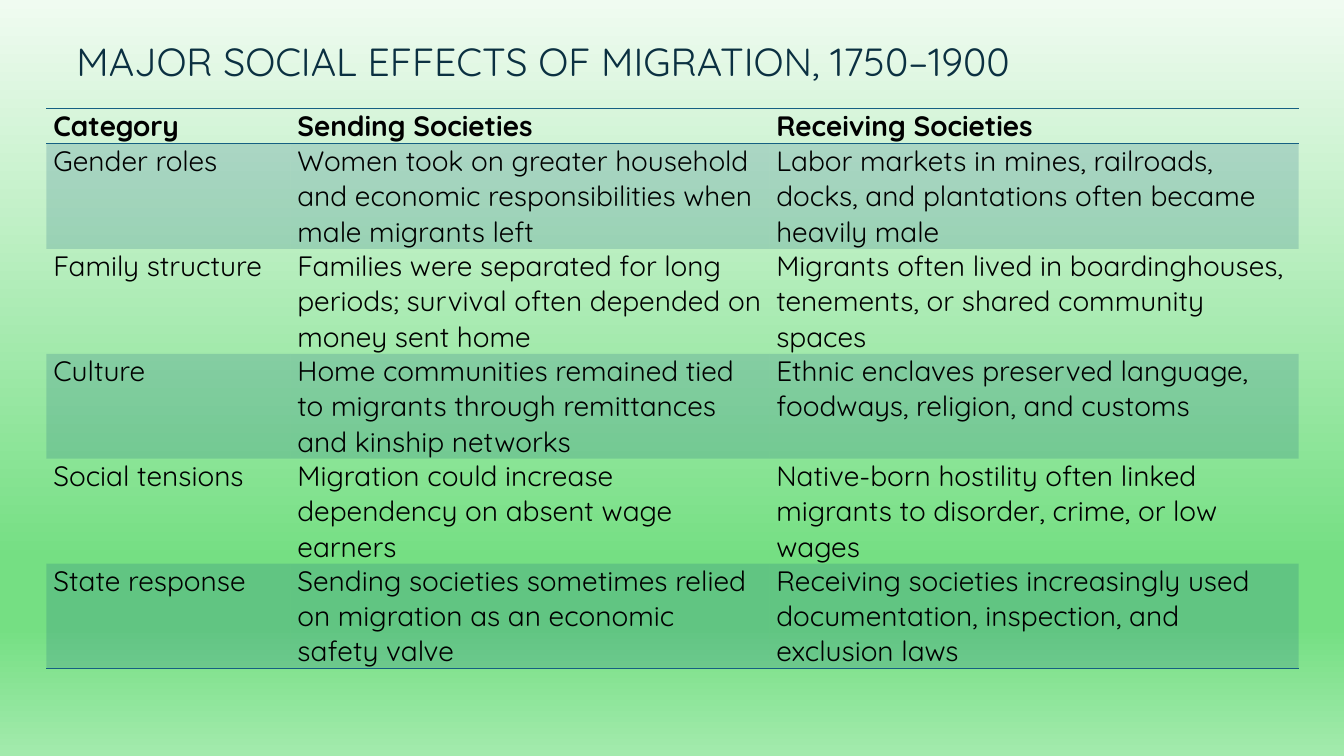
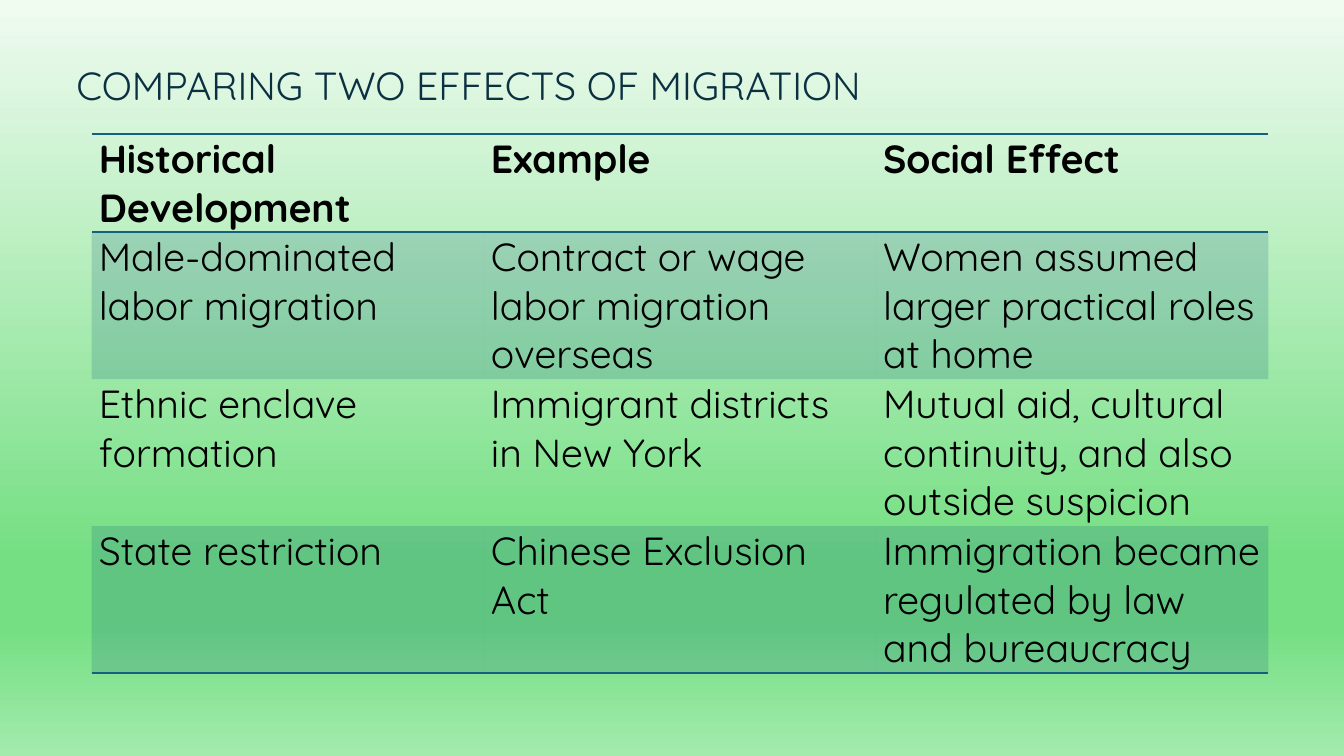
from lxml import etree
from pptx import Presentation
from pptx.dml.color import RGBColor
from pptx.enum.text import MSO_ANCHOR
from pptx.oxml.ns import qn
from pptx.util import Inches, Pt

BOTTOM = MSO_ANCHOR.BOTTOM
FONT = "Quicksand"
COLORS = {"title": "0B3041", "text": "000000", "accent": "156082"}
BACKGROUND_STOPS = [(0, "F0FBF1"), (74, "75DF83"), (83, "75DF83"), (100, "A3EAAD")]
BAND_OPACITY = 20
TITLE_SIZE = 28
LINE_HEIGHT = 1.25
PLAIN_TABLE_STYLE = "{2D5ABB26-0587-4C30-8999-92F81FD0307C}"

SLIDES = [
    {
        "title": "MAJOR SOCIAL EFFECTS OF MIGRATION, 1750–1900",
        "title_top": 0.01,
        "table_at": (0.46, 1.08),
        "columns": [2.42, 4.75, 5.25],
        "size": 20,
        "header_lines": 1,
        "rows": [
            ("Category", "Sending Societies", "Receiving Societies"),
            ("Gender roles",
             "Women took on greater household and economic responsibilities when male migrants left",
             "Labor markets in mines, railroads, docks, and plantations often became heavily male"),
            ("Family structure",
             "Families were separated for long periods; survival often depended on money sent home",
             "Migrants often lived in boardinghouses, tenements, or shared community spaces"),
            ("Culture",
             "Home communities remained tied to migrants through remittances and kinship networks",
             "Ethnic enclaves preserved language, foodways, religion, and customs"),
            ("Social tensions",
             "Migration could increase dependency on absent wage earners",
             "Native-born hostility often linked migrants to disorder, crime, or low wages"),
            ("State response",
             "Sending societies sometimes relied on migration as an economic safety valve",
             "Receiving societies increasingly used documentation, inspection, and exclusion laws"),
        ],
    },
    {
        "title": "COMPARING TWO EFFECTS OF MIGRATION",
        "title_top": 0.25,
        "table_at": (0.91, 1.33),
        "columns": [3.89, 3.89, 3.89],
        "size": 28,
        "header_lines": 2,
        "rows": [
            ("Historical Development", "Example", "Social Effect"),
            ("Male-dominated labor migration",
             "Contract or wage labor migration overseas",
             "Women assumed larger practical roles at home"),
            ("Ethnic enclave formation",
             "Immigrant districts in New York",
             "Mutual aid, cultural continuity, and also outside suspicion"),
            ("State restriction",
             "Chinese Exclusion Act",
             "Immigration became regulated by law and bureaucracy"),
        ],
    },
]
BODY_LINES = 3


def rgb(name):
    return RGBColor.from_string(COLORS[name])


def paint_background(master):
    fill = master.background.fill
    fill.gradient()
    fill.gradient_angle = 270
    stops = master.element.find(".//" + qn("a:gsLst"))
    for old_stop in list(stops):
        stops.remove(old_stop)
    for position, color in BACKGROUND_STOPS:
        stop = etree.SubElement(stops, qn("a:gs"), pos=str(position * 1000))
        etree.SubElement(stop, qn("a:srgbClr"), val=color)


def add_text(paragraph, text, size, color, bold=False):
    run = paragraph.add_run()
    run.text = text
    run.font.name = FONT
    run.font.size = Pt(size)
    run.font.bold = bold
    run.font.color.rgb = rgb(color)


def add_title(slide, text, top):
    title = slide.shapes.add_textbox(Inches(0.66), Inches(top), Inches(11.67), Inches(0.88))
    frame = title.text_frame
    frame.word_wrap = True
    frame.vertical_anchor = BOTTOM
    frame.paragraphs[0].line_spacing = 0.9
    add_text(frame.paragraphs[0], text, TITLE_SIZE, "title")


def add_border(cell, side):
    properties = cell._tc.get_or_add_tcPr()
    line = etree.SubElement(properties, qn("a:" + side), w=str(Pt(1)))
    solid = etree.SubElement(line, qn("a:solidFill"))
    etree.SubElement(solid, qn("a:srgbClr"), val=COLORS["accent"])


def fill_band(cell):
    cell.fill.solid()
    cell.fill.fore_color.rgb = rgb("accent")
    color = cell._tc.tcPr.find(qn("a:solidFill")).find(qn("a:srgbClr"))
    etree.SubElement(color, qn("a:alpha"), val=str(BAND_OPACITY * 1000))


def style_cell(cell, row, last_row):
    cell.margin_left = cell.margin_right = Inches(0.07)
    cell.margin_top = cell.margin_bottom = 0
    if row == 0:
        add_border(cell, "lnT")
    if row in (0, last_row):
        add_border(cell, "lnB")
    if row % 2:
        fill_band(cell)
    else:
        cell.fill.background()


def add_comparison(slide, content):
    rows, columns, size = content["rows"], content["columns"], content["size"]
    line = size * LINE_HEIGHT
    heights = [Pt(line * content["header_lines"])] + [Pt(line * BODY_LINES)] * (len(rows) - 1)
    left, top = content["table_at"]
    frame = slide.shapes.add_table(len(rows), len(columns), Inches(left), Inches(top),
                                   Inches(sum(columns)), sum(heights))
    table = frame.table
    table._tbl.tblPr.find(qn("a:tableStyleId")).text = PLAIN_TABLE_STYLE
    for column, width in zip(table.columns, columns):
        column.width = Inches(width)
    for r, texts in enumerate(rows):
        table.rows[r].height = heights[r]
        for c, text in enumerate(texts):
            cell = table.cell(r, c)
            style_cell(cell, r, len(rows) - 1)
            add_text(cell.text_frame.paragraphs[0], text, size, "text", bold=r == 0)


def main():
    presentation = Presentation()
    presentation.slide_width = Inches(13.33)
    presentation.slide_height = Inches(7.5)
    paint_background(presentation.slide_master)
    blank = presentation.slide_layouts[6]
    for content in SLIDES:
        slide = presentation.slides.add_slide(blank)
        add_title(slide, content["title"], content["title_top"])
        add_comparison(slide, content)
    presentation.save("out.pptx")


if __name__ == "__main__":
    main()
